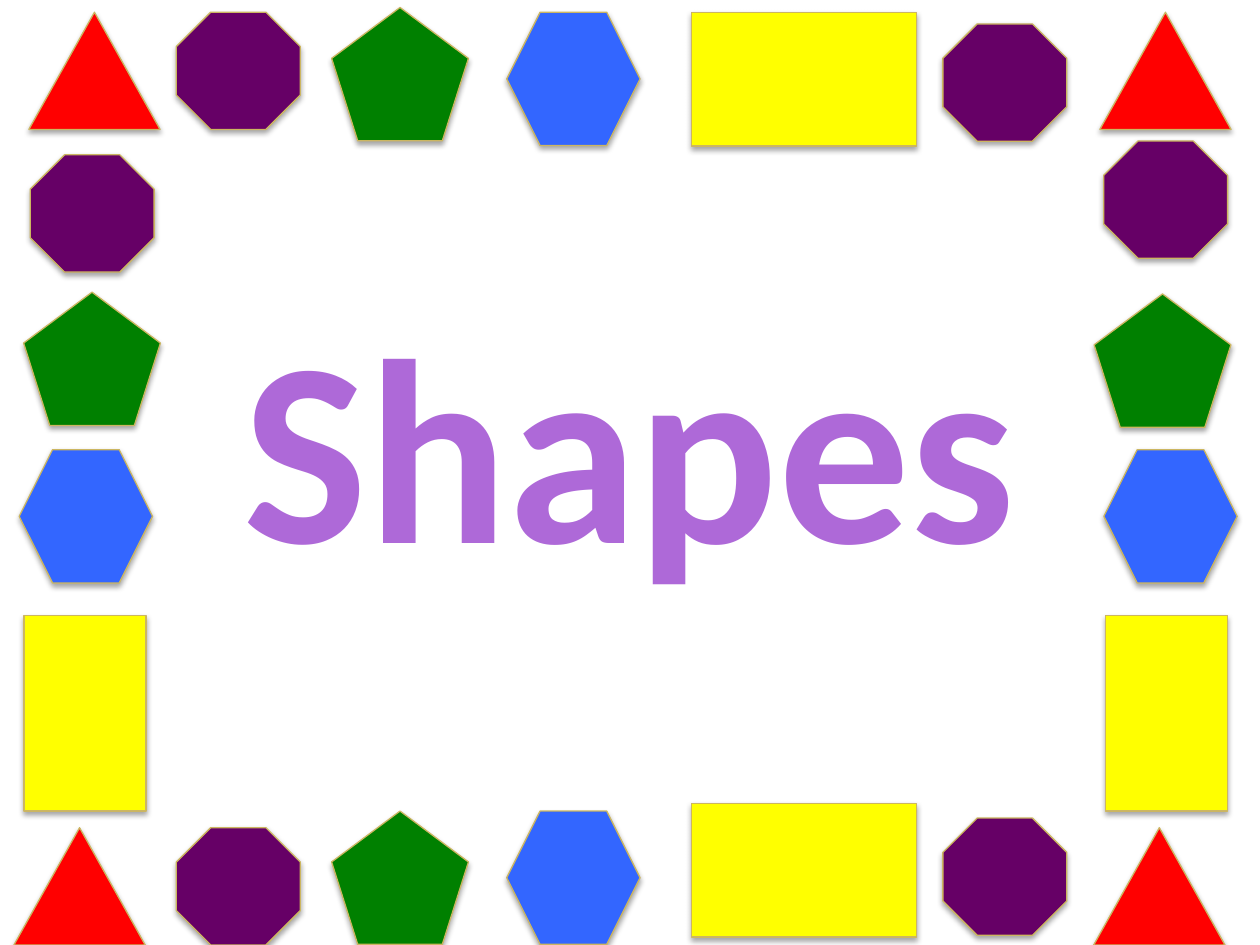
from lxml import etree
from pptx import Presentation
from pptx.dml.color import RGBColor
from pptx.enum.shapes import MSO_SHAPE
from pptx.enum.text import MSO_ANCHOR, MSO_AUTO_SIZE, PP_ALIGN
from pptx.util import Pt

SHADOW = (
    '<a:effectLst xmlns:a="http://schemas.openxmlformats.org/drawingml/2006/main">'
    '<a:outerShdw blurRad="40000" dist="23000" dir="5400000" rotWithShape="0">'
    '<a:srgbClr val="000000"><a:alpha val="35000"/></a:srgbClr>'
    '</a:outerShdw></a:effectLst>'
)


def paint(color_format, hex_color):
    color_format.rgb = RGBColor.from_string(hex_color)


presentation = Presentation()
presentation.slide_width, presentation.slide_height = Pt(720), Pt(540)
slide = presentation.slides.add_slide(presentation.slide_layouts[0])

# Title in the middle of the frame
subtitle = slide.placeholders[1]
subtitle.element.getparent().remove(subtitle.element)
title = slide.shapes.title
title.left, title.top, title.width, title.height = Pt(54), Pt(168), Pt(612), Pt(165.5)
title.text_frame.text = "Shapes"
title.text_frame.auto_size = MSO_AUTO_SIZE.NONE
title.text_frame.vertical_anchor = MSO_ANCHOR.MIDDLE
heading = title.text_frame.paragraphs[0]
heading.alignment = PP_ALIGN.CENTER
heading.font.name = "Calibri"
heading.font.size = Pt(150)
heading.font.bold = True
heading.font.fill.solid()
paint(heading.font.fill.fore_color, "AE69D8")

# Each figure: preset, colour, width, height, rotation, (left, top) places
figures = [
    (MSO_SHAPE.ISOSCELES_TRIANGLE, "FF0000", 75, 67, 0,
     [(16.5, 7), (628.5, 7), (8, 473), (625, 473)]),
    (MSO_SHAPE.OCTAGON, "660066", 70.8, 67, 0,
     [(100.8, 7), (538.8, 13.7), (17.3, 88.5), (630.7, 80.6),
      (100.8, 473), (538.8, 467.5)]),
    (MSO_SHAPE.REGULAR_PENTAGON, "008000", 78.2, 76.2, 0,
     [(189.5, 4.3), (13.5, 167), (625.2, 168), (189.5, 463.5)]),
    (MSO_SHAPE.HEXAGON, "3366FF", 76.2, 76.2, 0,
     [(289.6, 7), (11, 257), (630.8, 257), (289.6, 463.5)]),
    (MSO_SHAPE.RECTANGLE, "FFFF00", 128.7, 76.5, 0,
     [(395, 7), (395, 459)]),
    (MSO_SHAPE.RECTANGLE, "FFFF00", 111.7, 69.8, 90,
     [(-7.3, 372.7), (610.7, 372.7)]),
]

# Frame of figures
for preset, color, width, height, rotation, places in figures:
    for left, top in places:
        figure = slide.shapes.add_shape(preset, Pt(left), Pt(top), Pt(width), Pt(height))
        figure.rotation = rotation
        figure.fill.solid()
        paint(figure.fill.fore_color, color)
        paint(figure.line.color, "CCB661")
        figure.line.width = Pt(0.75)
        figure.element.spPr.append(etree.fromstring(SHADOW))

presentation.save("out.pptx")
